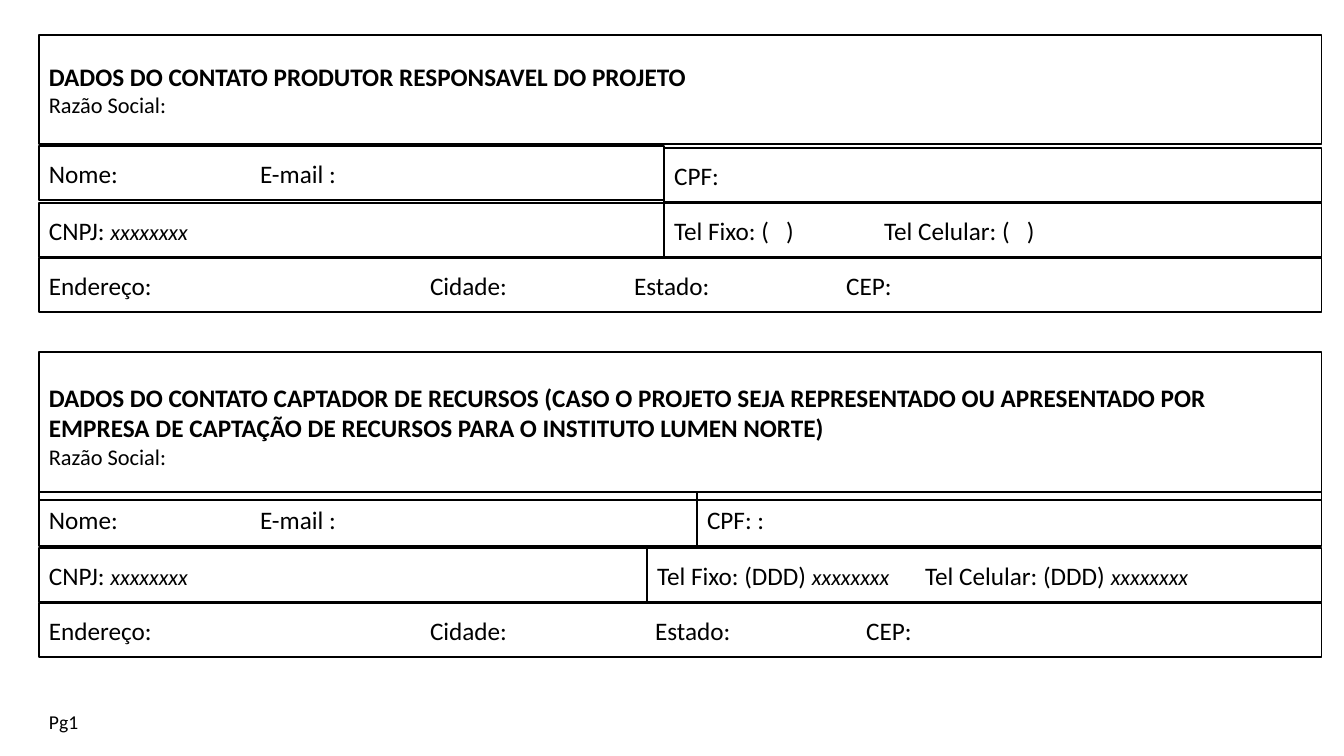
import pptx
import pptx.util
import pptx.dml.color
import pptx.enum.shapes
import pptx.enum.text
import pptx.oxml.ns
import lxml.etree

# Content: a run is (text, size, style); a tab moves to the next stop
SAMPLE = ("xxxxxxxx", 16, "italic")
COMPANY = [("Razão Social:", 16, "")]
NAME = [("Nome:\tE-mail :", 18, "")]
CNPJ = [("CNPJ: ", 18, ""), SAMPLE]
ADDRESS = [("Endereço:\tCidade:\tEstado:\tCEP:", 18, "")]
PRODUCER = [("DADOS DO CONTATO PRODUTOR RESPONSAVEL DO PROJETO", 18, "bold")]
FUNDRAISER = [("DADOS DO CONTATO CAPTADOR DE RECURSOS (CASO O PROJETO SEJA "
               "REPRESENTADO OU APRESENTADO POR EMPRESA DE CAPTAÇÃO DE "
               "RECURSOS PARA O INSTITUTO LUMEN NORTE)", 18, "bold")]
PRODUCER_PHONES = [("Tel Fixo: (   )\tTel Celular: (   )", 18, "")]
FUNDRAISER_PHONES = [("Tel Fixo: (DDD) ", 18, ""), SAMPLE,
                     ("\tTel Celular: (DDD) ", 18, ""), SAMPLE]

# Form fields: left, top, right, height, paragraphs, tab stops (px)
LEFT, RIGHT, ROW = 39, 1321, 54
FIELDS = [
    (LEFT, 35, RIGHT, 109, [PRODUCER, COMPANY], []),
    (LEFT, 146, 664, ROW, [NAME], [211]),
    (664, 148, RIGHT, ROW, [[("CPF:", 18, "")]], []),
    (LEFT, 203, 664, ROW, [CNPJ], []),
    (664, 203, RIGHT, ROW, [PRODUCER_PHONES], [210]),
    (LEFT, 258, RIGHT, ROW, [ADDRESS], [381, 585, 797]),
    (LEFT, 352, RIGHT, 148, [FUNDRAISER, COMPANY], []),
    (LEFT, 492, 697, ROW, [NAME], [211]),
    (697, 492, RIGHT, ROW, [[("CPF: :", 18, "")]], []),
    (LEFT, 548, 647, ROW, [CNPJ], []),
    (647, 548, RIGHT, ROW, [FUNDRAISER_PHONES], [268]),
    (LEFT, 603, RIGHT, ROW, [ADDRESS], [381, 606, 817]),
]
PAGE = [("Pg1", 14, "")]
PX_PER_INCH = 100.8


def px(length):
    return pptx.util.Inches(length / PX_PER_INCH)


def color(value):
    return pptx.dml.color.RGBColor.from_string(value)


def write(frame, paragraphs, stops=()):
    for index, runs in enumerate(paragraphs):
        paragraph = frame.paragraphs[0] if index == 0 else frame.add_paragraph()
        paragraph.alignment = pptx.enum.text.PP_ALIGN.LEFT
        if stops:
            tabs = lxml.etree.SubElement(paragraph._p.get_or_add_pPr(),
                                         pptx.oxml.ns.qn("a:tabLst"))
            for stop in stops:
                lxml.etree.SubElement(tabs, pptx.oxml.ns.qn("a:tab"),
                                      pos=str(px(stop)), algn="l")
        for text, size, style in runs:
            run = paragraph.add_run()
            run.text = text
            run.font.name = "Calibri"
            run.font.size = pptx.util.Pt(size)
            run.font.bold = style == "bold"
            run.font.italic = style == "italic"
            run.font.color.rgb = color("000000")


def main():
    deck = pptx.Presentation()
    deck.slide_width = pptx.util.Inches(13.33)
    deck.slide_height = pptx.util.Inches(7.5)
    slide = deck.slides.add_slide(deck.slide_layouts[6])

    # Form fields
    for left, top, right, height, paragraphs, stops in FIELDS:
        field = slide.shapes.add_shape(
            pptx.enum.shapes.MSO_SHAPE.RECTANGLE,
            px(left), px(top), px(right - left), px(height))
        field.shadow.inherit = False
        field.fill.background()
        field.line.color.rgb = color("000000")
        field.line.width = pptx.util.Pt(1)
        field.text_frame.word_wrap = True
        field.text_frame.vertical_anchor = pptx.enum.text.MSO_ANCHOR.MIDDLE
        write(field.text_frame, paragraphs, stops)

    # Page mark
    page = slide.shapes.add_textbox(px(LEFT), px(705), px(50), px(34))
    page.text_frame.word_wrap = False
    write(page.text_frame, [PAGE])

    deck.save("out.pptx")


if __name__ == "__main__":
    main()
